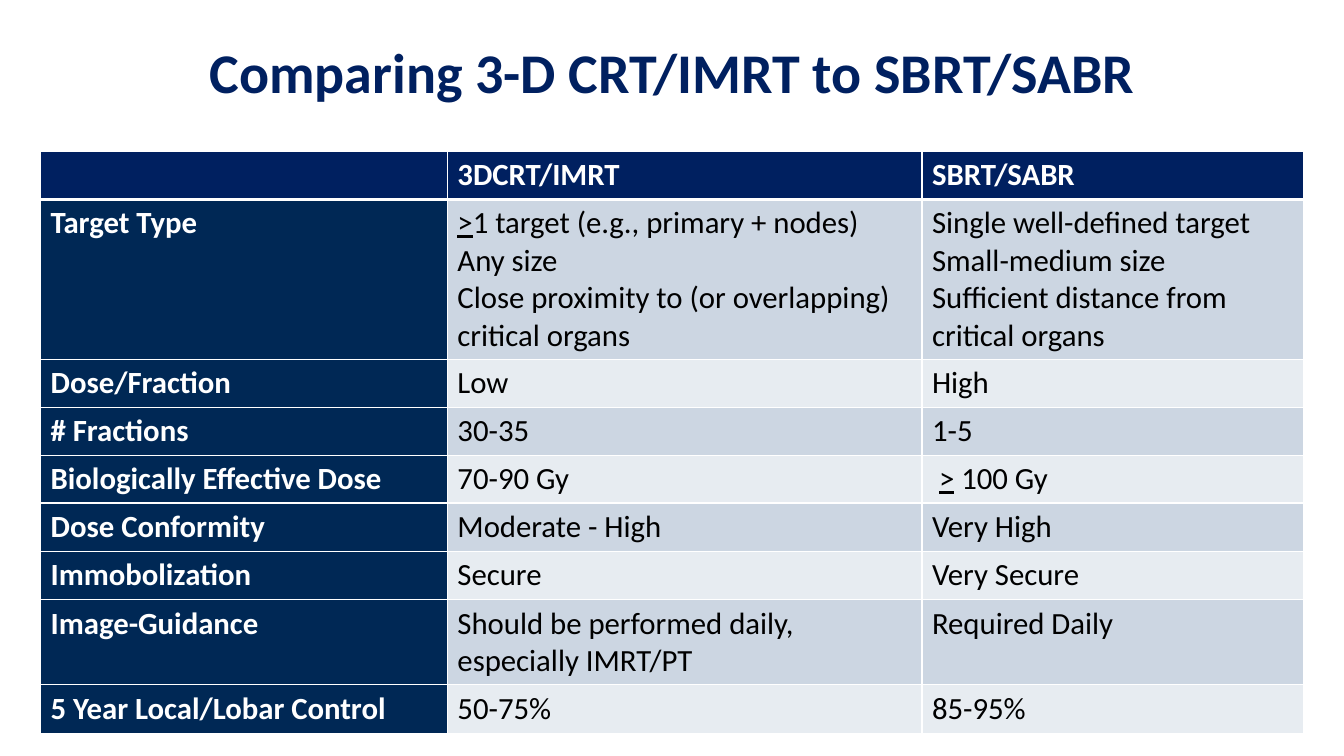
from lxml.etree import SubElement
from pptx import Presentation
from pptx.dml.color import RGBColor
from pptx.enum.text import MSO_ANCHOR, PP_ALIGN
from pptx.oxml.ns import qn
from pptx.util import Pt

TITLE = "Comparing 3-D CRT/IMRT to SBRT/SABR"
HEADER = ("", ["3DCRT/IMRT"], ["SBRT/SABR"])
COMPARISON = [
    ("Target Type",
     [">1 target (e.g., primary + nodes)", "Any size",
      "Close proximity to (or overlapping) critical organs"],
     ["Single well-defined target", "Small-medium size",
      "Sufficient distance from critical organs"]),
    ("Dose/Fraction", ["Low"], ["High"]),
    ("# Fractions", ["30-35"], ["1-5"]),
    ("Biologically Effective Dose", ["70-90 Gy"], [" > 100 Gy"]),
    ("Dose Conformity", ["Moderate - High"], ["Very High"]),
    ("Immobolization", ["Secure"], ["Very Secure"]),
    ("Image-Guidance", ["Should be performed daily, especially IMRT/PT"],
     ["Required Daily"]),
    ("5 Year Local/Lobar Control", ["50-75%"], ["85-95%"]),
]
COLUMN_WIDTHS = (290.6, 339, 272.6)
ROW_HEIGHTS = (34.56, 105.84, 31.68, 34.56, 31.68, 34.56, 34.56, 56.16, 34.56)

NAVY = RGBColor(0x00, 0x20, 0x60)
LABEL_BLUE = RGBColor(0x00, 0x28, 0x55)
BAND_DARK = RGBColor(0xCC, 0xD6, 0xE2)
BAND_LIGHT = RGBColor(0xE7, 0xEC, 0xF1)
WHITE = RGBColor(0xFF, 0xFF, 0xFF)
BLACK = RGBColor(0x00, 0x00, 0x00)
FONT = "Calibri"


def add_run(paragraph, text, size, color, bold, underline=False):
    run = paragraph.add_run()
    run.text = text
    run.font.name = FONT
    run.font.size = Pt(size)
    run.font.bold = bold
    run.font.underline = underline
    run.font.color.rgb = color


def set_borders(cell, bottom_width):
    properties = cell._tc.get_or_add_tcPr()
    sides = (("a:lnL", 1), ("a:lnR", 1), ("a:lnT", 1), ("a:lnB", bottom_width))
    for side, width in sides:
        border = SubElement(properties, qn(side), w=str(Pt(width)))
        fill = SubElement(border, qn("a:solidFill"))
        SubElement(fill, qn("a:srgbClr"), val=str(WHITE))


def fill_cell(cell, lines, background, color, bold, bottom_width):
    set_borders(cell, bottom_width)
    cell.fill.solid()
    cell.fill.fore_color.rgb = background
    for index, line in enumerate(lines):
        frame = cell.text_frame
        paragraph = frame.add_paragraph() if index else frame.paragraphs[0]
        for part in line.partition(">"):
            if part:
                add_run(paragraph, part, 22, color, bold, part == ">")


def add_title(slide):
    title = slide.shapes.title
    title.left, title.top = Pt(0), Pt(6)
    title.width, title.height = Pt(960), Pt(90)
    title.text_frame.vertical_anchor = MSO_ANCHOR.MIDDLE
    paragraph = title.text_frame.paragraphs[0]
    paragraph.alignment = PP_ALIGN.CENTER
    add_run(paragraph, TITLE, 40, NAVY, True)


def add_comparison(slide):
    table = slide.shapes.add_table(
        len(ROW_HEIGHTS), len(COLUMN_WIDTHS), Pt(29), Pt(108),
        Pt(sum(COLUMN_WIDTHS)), Pt(sum(ROW_HEIGHTS))).table
    for column, width in zip(table.columns, COLUMN_WIDTHS):
        column.width = Pt(width)
    for row, height in zip(table.rows, ROW_HEIGHTS):
        row.height = Pt(height)
    for r, (label, *treatments) in enumerate([HEADER] + COMPARISON):
        band = BAND_DARK if r % 2 else BAND_LIGHT
        for c, lines in enumerate([[label], *treatments]):
            heading = r == 0 or c == 0
            background = NAVY if r == 0 else LABEL_BLUE if c == 0 else band
            fill_cell(table.cell(r, c), lines, background,
                      WHITE if heading else BLACK, heading, 1 if r else 3)


def main():
    presentation = Presentation()
    presentation.slide_width, presentation.slide_height = Pt(960), Pt(540)
    slide = presentation.slides.add_slide(presentation.slide_layouts[5])
    add_title(slide)
    add_comparison(slide)
    presentation.save("out.pptx")


if __name__ == "__main__":
    main()
